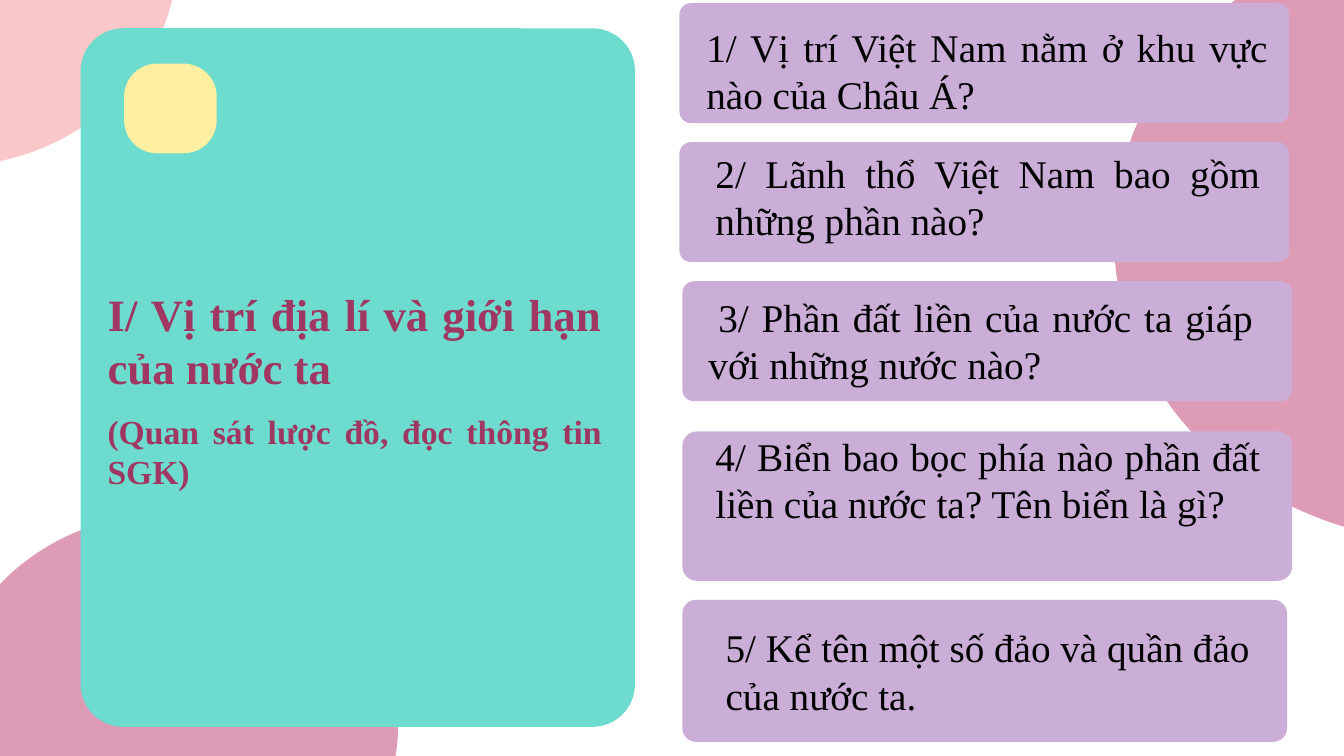
"""Build the geography question slide about Vietnam's location and limits."""
from pptx import Presentation
from pptx import util as u
from pptx.dml.color import RGBColor
from pptx.enum import shapes, text

PINK = RGBColor(0xF9, 0xC7, 0xC8)
ROSE = RGBColor(0xDD, 0x9B, 0xB6)
TEAL = RGBColor(0x6D, 0xDC, 0xCF)
YELLOW = RGBColor(0xFF, 0xEF, 0xA1)
LILAC = RGBColor(0xCB, 0xAE, 0xD8)
PLUM = RGBColor(0xA0, 0x37, 0x62)
BLACK = RGBColor(0, 0, 0)

CIRCLES = [
    ((-198.7, -183.6, 325.4, 302.4), PINK),
    ((795.6, -50.4, 480.2, 437.8), ROSE),
    ((-41, 366.5, 325.4, 301.7), ROSE),
]
QUESTIONS = [
    ((485.3, 2.2, 435.6, 85.7), (497.5, 13, 415.4, 74.9), 0,
     "1/ Vị trí Việt Nam nằm ở khu vực nào của Châu Á?"),
    ((485.3, 101.5, 435.6, 85.7), (504, 103, 403.2, 74.9), 0,
     "2/ Lãnh thổ Việt Nam bao gồm những phần nào?"),
    ((487.4, 200.9, 435.6, 85.7), (499, 205.9, 403.2, 108.7), 7,
     "3/ Phần đất liền của nước ta giáp với những nước nào?"),
    ((487.4, 308.2, 435.6, 106.6), (504, 305.3, 403.2, 74.9), 0,
     "4/ Biển bao bọc phía nào phần đất liền của nước ta? Tên biển là gì?"),
]
ISLAND_LINES = ["5/ Kể tên một số đảo và quần đảo", "của nước ta."]


class LessonSlide:
    """Hold the lesson style and the current slide."""

    font_name = "Times New Roman"
    card_corner = 0.097

    def __init__(self, presentation):
        """Add a blank slide to the presentation."""
        self.slide = presentation.slides.add_slide(presentation.slide_layouts[6])

    def shape(self, kind, box, color, corner=None):
        """Add a flat filled shape."""
        shape = self.slide.shapes.add_shape(kind, *map(u.Pt, box))
        shape.shadow.inherit = False
        shape.fill.solid()
        shape.fill.fore_color.rgb = color
        shape.line.fill.background()
        if corner is not None:
            shape.adjustments[0] = corner
        return shape

    def circle(self, box, color):
        """Add a background ellipse."""
        return self.shape(shapes.MSO_SHAPE.OVAL, box, color)

    def card(self, box, color=LILAC, corner=card_corner):
        """Add a rounded card."""
        return self.shape(shapes.MSO_SHAPE.ROUNDED_RECTANGLE, box, color, corner)

    def add_lines(self, frame, lines, size=28, color=BLACK, bold=False, margin=0, indent=0):
        """Add justified paragraphs, given as (text, size, space before) or plain text."""
        frame.word_wrap = True
        for index, line in enumerate(lines):
            content, line_size, before = line if isinstance(line, tuple) else (line, size, 0)
            paragraph = frame.paragraphs[0] if index == 0 else frame.add_paragraph()
            paragraph.text = content
            paragraph.alignment = text.PP_ALIGN.JUSTIFY
            paragraph.space_before = u.Pt(before)
            properties = paragraph._p.get_or_add_pPr()
            properties.set("marL", str(u.Pt(margin)))
            properties.set("indent", str(u.Pt(indent)))
            font = paragraph.runs[0].font
            values = {"name": self.font_name, "size": u.Pt(line_size), "bold": bold}
            for name, value in values.items():
                setattr(font, name, value)
            font.color.rgb = color

    def text_box(self, box, lines, **style):
        """Add a wrapped text box."""
        frame = self.slide.shapes.add_textbox(*map(u.Pt, box)).text_frame
        self.add_lines(frame, lines, **style)


def main():
    """Draw the slide and save it."""
    presentation = Presentation()
    presentation.slide_width = u.Pt(960)
    presentation.slide_height = u.Pt(540)
    lesson = LessonSlide(presentation)

    for box, color in CIRCLES:
        lesson.circle(box, color)
    lesson.card((57.6, 20.2, 396, 499), TEAL, 0.077)
    lesson.card((88.6, 45.4, 66.2, 64.1), YELLOW, 0.369)
    lesson.text_box(
        (69.8, 200.9, 367.2, 157.7),
        [("I/ Vị trí địa lí và giới hạn của nước ta", 32, 0),
         ("(Quan sát lược đồ, đọc thông tin SGK)", 24, 12)],
        color=PLUM, bold=True)

    for card_box, text_box, indent, question in QUESTIONS:
        lesson.card(card_box)
        lesson.text_box(text_box, [question], indent=indent)

    island_card = lesson.card((487.4, 428.4, 432, 101.5))
    island_card.text_frame.vertical_anchor = text.MSO_ANCHOR.MIDDLE
    lesson.add_lines(island_card.text_frame, ISLAND_LINES, margin=21)

    presentation.save("out.pptx")


if __name__ == "__main__":
    main()
